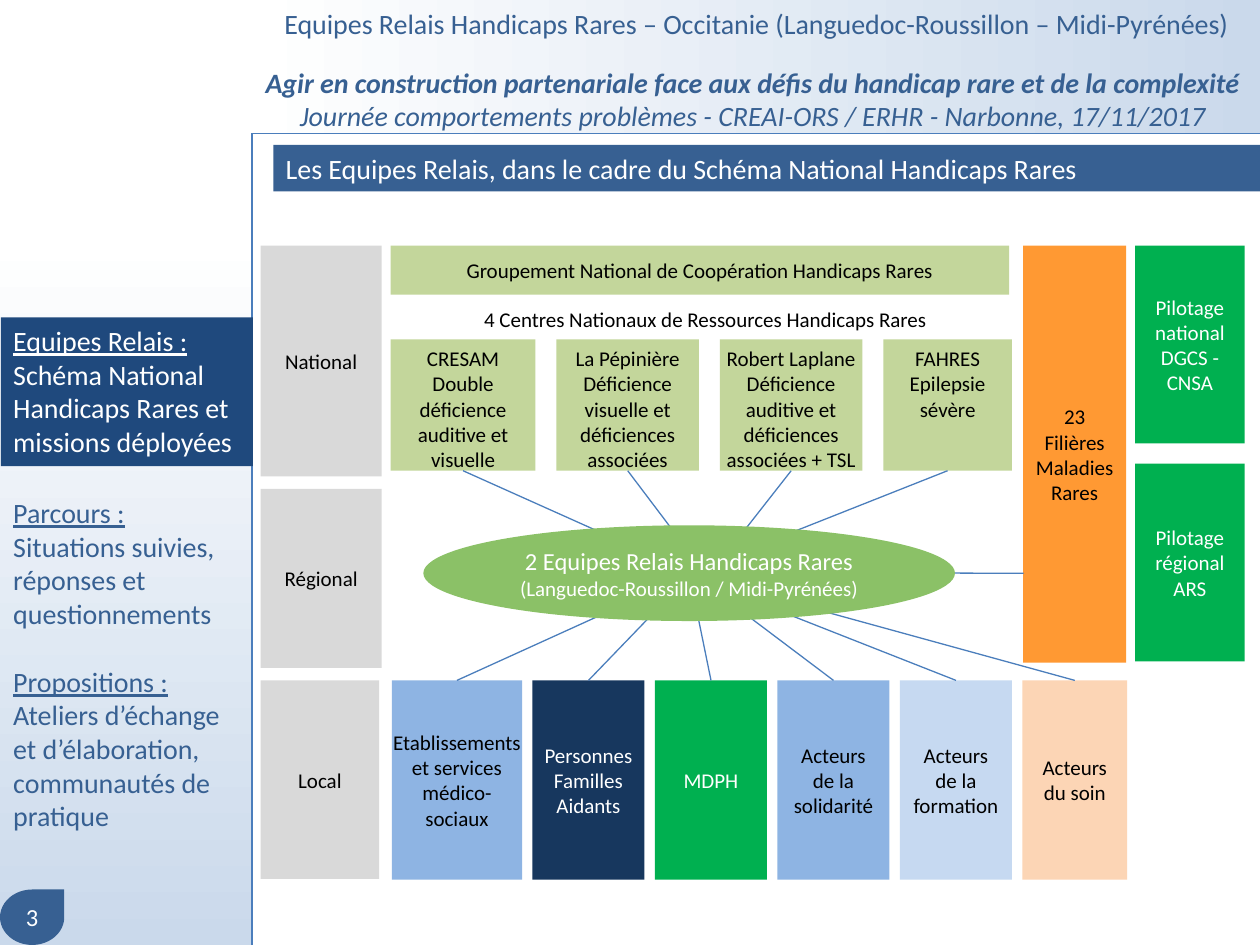
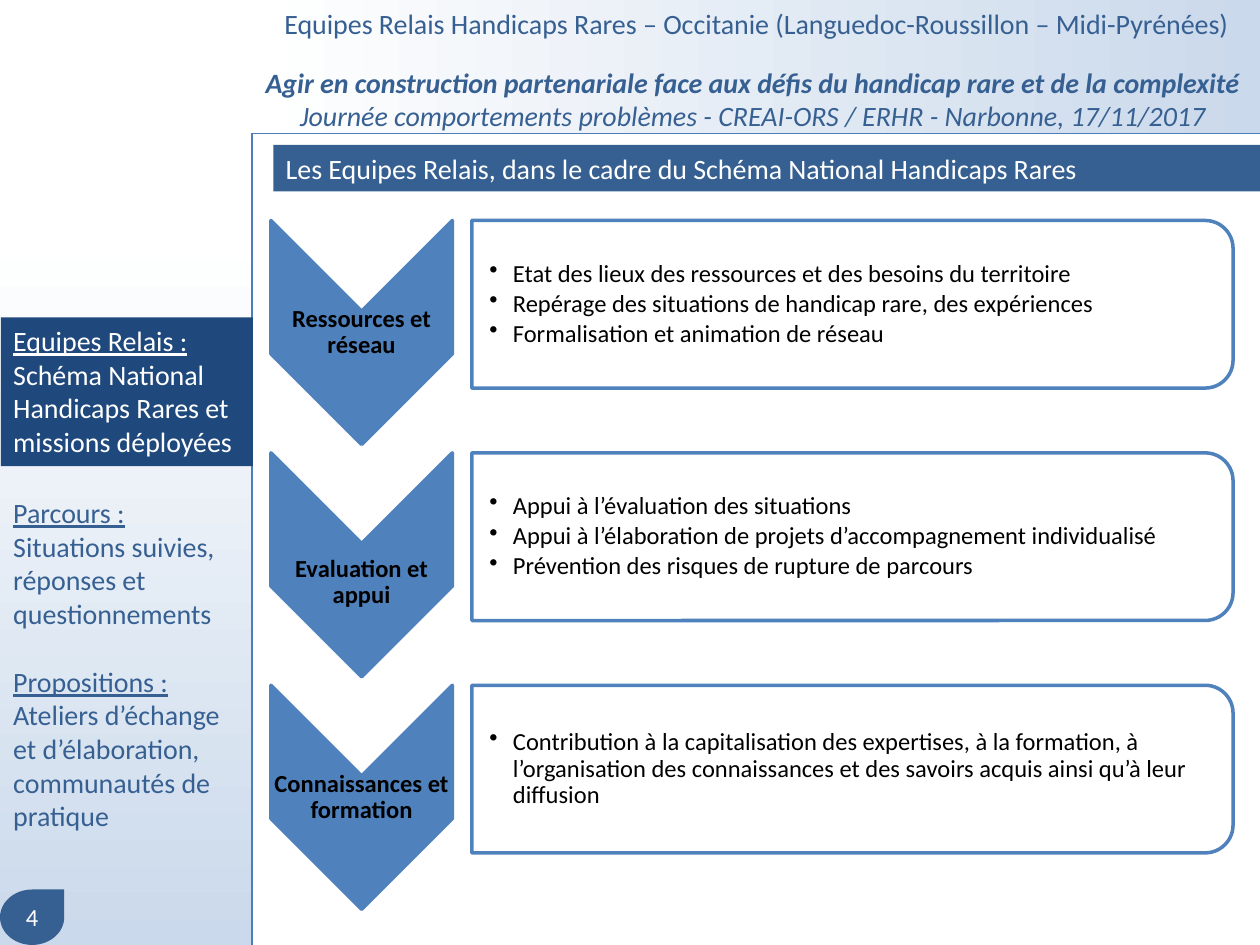
from dataclasses import dataclass

import pptx
import pptx.dml.color
import pptx.enum.shapes
import pptx.enum.text
import pptx.oxml
import pptx.oxml.ns
import pptx.util

Pt = pptx.util.Pt
SHAPE = pptx.enum.shapes.MSO_SHAPE
ALIGN = pptx.enum.text.PP_ALIGN
ANCHOR = pptx.enum.text.MSO_ANCHOR

FONT = "Calibri"
COLORS = {
    "white": "FFFFFF", "black": "000000", "pale": "CAD9EB", "blue": "376092",
    "active": "1F497D", "line": "4B7EBC", "grey": "D9D9D9", "olive": "C3D69B",
    "orange": "FF9933", "green": "00B050", "sky": "8EB4E3", "navy": "17375E",
    "ice": "C6D9F1", "peach": "FCD5B5", "relay": "8BC167", "step": "4F81BD",
}


@dataclass
class Text:
    text: str
    color: str = "black"
    size: float = 12
    align: ALIGN = ALIGN.CENTER
    anchor: ANCHOR = ANCHOR.MIDDLE
    inset_x: float = 7.2
    inset_y: float = 3.6


@dataclass
class Box:
    x: float
    y: float
    w: float
    h: float
    fill: str
    text: Text | None = None
    shape: SHAPE = SHAPE.RECTANGLE


@dataclass
class Cell:
    w: float
    fill: str
    text: Text
    hub: tuple[float, float]


@dataclass
class Step:
    label: str
    bullets: str
    label_shift: float = 0


def rgb(name: str) -> pptx.dml.color.RGBColor:
    return pptx.dml.color.RGBColor.from_string(COLORS[name])


def write(sp, t: Text):
    tf = sp.text_frame
    tf.word_wrap = True
    tf.vertical_anchor = t.anchor
    tf.margin_left = tf.margin_right = Pt(t.inset_x)
    tf.margin_top = tf.margin_bottom = Pt(t.inset_y)
    tf.text = t.text
    for p in tf.paragraphs:
        p.alignment = t.align
        for r in p.runs:
            r.font.name = FONT
            r.font.size = Pt(t.size)
            r.font.color.rgb = rgb(t.color)
    return tf


def add_text(s, x: float, y: float, w: float, h: float, t: Text):
    return write(s.shapes.add_textbox(Pt(x), Pt(y), Pt(w), Pt(h)), t)


def add_box(s, b: Box):
    sp = s.shapes.add_shape(b.shape, Pt(b.x), Pt(b.y), Pt(b.w), Pt(b.h))
    sp.shadow.inherit = False
    sp.fill.solid()
    sp.fill.fore_color.rgb = rgb(b.fill)
    sp.line.fill.background()
    if b.text:
        write(sp, b.text)
    return sp


def add_fade(s, b: Box, angle: float) -> None:
    fill = add_box(s, b).fill
    fill.gradient()
    fill.gradient_angle = angle
    for stop, position, color in zip(fill.gradient_stops, (0, 1), ("white", b.fill)):
        stop.position = position
        stop.color.rgb = rgb(color)


def add_turned(s, b: Box) -> None:
    x, y = b.x + (b.w - b.h) / 2, b.y + (b.h - b.w) / 2
    sp = add_box(s, Box(x, y, b.h, b.w, b.fill, shape=b.shape))
    sp.rotation = 90
    sp.line.color.rgb = rgb("step")
    sp.line.width = Pt(2)


def add_line(s, x1: float, y1: float, x2: float, y2: float):
    c = s.shapes.add_connector(pptx.enum.shapes.MSO_CONNECTOR.STRAIGHT,
                               Pt(x1), Pt(y1), Pt(x2), Pt(y2))
    c.line.color.rgb = rgb("line")
    c.line.width = Pt(0.75)
    pptx.oxml.ns.qn("a:effectLst")
    c._element.spPr.append(pptx.oxml.parse_xml(
        f"<a:effectLst {pptx.oxml.ns.nsdecls('a')}/>"))
    return c


def underline(paragraphs) -> None:
    for p in paragraphs:
        p.runs[0].font.underline = True


def add_frame(prs, number: int):
    s = prs.slides.add_slide(prs.slide_layouts[6])
    add_fade(s, Box(142.6, 0, 577.4, 76.3, "pale"), 0)
    add_fade(s, Box(0, 134, 144.7, 406, "pale"), 270)
    add_box(s, Box(0, 508.3, 36.7, 31.7, "blue",
                   Text(str(number), "white", 14, inset_x=2.9, inset_y=2.9),
                   SHAPE.TEAR))
    add_text(s, 144.7, 0, 575.3, 26.6, Text(
        "Equipes Relais Handicaps Rares – Occitanie (Languedoc-Roussillon – Midi-Pyrénées)",
        "blue", 16, anchor=ANCHOR.TOP))
    tf = add_text(s, 0.5, 279.8, 144, 200, Text(
        "Parcours :\nSituations suivies, réponses et questionnements\n"
        "Propositions :\nAteliers d’échange et d’élaboration, communautés de pratique",
        "blue", 16, ALIGN.LEFT, ANCHOR.TOP))
    underline(tf.paragraphs[::2])
    tf.paragraphs[2].space_before = Pt(19.5)
    add_line(s, 720, 76.3, 144, 76.3)
    add_line(s, 144, 76.3, 144, 540)
    tf = add_text(s, 142.6, 33.8, 575.3, 46, Text(
        "Agir en construction partenariale face aux défis du handicap rare et de la complexité\n"
        "Journée comportements problèmes - CREAI-ORS / ERHR - Narbonne, 17/11/2017",
        "blue", 16, anchor=ANCHOR.TOP))
    for p in tf.paragraphs:
        p.runs[0].font.italic = True
    tf.paragraphs[0].runs[0].font.bold = True
    add_box(s, Box(156.2, 82.8, 563.8, 26.6, "blue", Text(
        "Les Equipes Relais, dans le cadre du Schéma National Handicaps Rares",
        "white", 16, ALIGN.LEFT, ANCHOR.TOP)))
    sp = add_box(s, Box(0.5, 181.4, 144, 85, "active", Text(
        "Equipes Relais :\nSchéma National Handicaps Rares et missions déployées",
        "white", 16, ALIGN.LEFT, ANCHOR.TOP)))
    underline(sp.text_frame.paragraphs[:1])
    return s


def add_linked_row(s, x: float, y: float, h: float, gap: float, site: int,
                   cells: list[Cell]) -> None:
    for cell in cells:
        sp = add_box(s, Box(x, y, cell.w, h, cell.fill, cell.text))
        c = add_line(s, *cell.hub, x + cell.w / 2, y)
        c.end_connect(sp, site)
        x += cell.w + gap


LEVELS = [
    Box(149, 140.4, 69.1, 131.8, "grey", Text("National")),
    Box(149, 279.4, 69.1, 102.2, "grey", Text("Régional")),
    Box(149, 388.8, 67.7, 113.4, "grey", Text("Local")),
    Box(223.2, 140.4, 353.5, 28, "olive",
        Text("Groupement National de Coopération Handicaps Rares")),
    Box(584.6, 140.4, 59, 238.3, "orange", Text("23\nFilières Maladies Rares")),
    Box(648.7, 140.4, 62.6, 113, "green",
        Text("Pilotage national DGCS - CNSA", "white")),
    Box(648.7, 265, 62.6, 113, "green", Text("Pilotage régional\nARS", "white")),
]


def center(text: str, inset_x: float = 7.2) -> Text:
    return Text(text, anchor=ANCHOR.TOP, inset_x=inset_x)


CENTERS = [
    Cell(82.8, "olive", center("CRESAM\nDouble déficience auditive et visuelle"), (393.8, 326.9)),
    Cell(81.4, "olive", center("La Pépinière\nDéficience visuelle et déficiences associées"),
         (400.3, 324)),
    Cell(81.4, "olive",
         center("Robert Laplane\nDéficience auditive et déficiences associées + TSL", 0),
         (409, 324)),
    Cell(73.4, "olive", center("FAHRES\nEpilepsie sévère"), (402.5, 324)),
]

LOCAL_ACTORS = [
    Cell(74.4, "sky", Text("Etablissements et services médico-sociaux", inset_x=0),
         (389.5, 330.5)),
    Cell(64, "navy", Text("Personnes Familles\nAidants", "white", inset_x=0), (395.3, 327.6)),
    Cell(64, "green", Text("MDPH", "white"), (393.8, 327.6)),
    Cell(64, "sky", Text("Acteurs de la solidarité"), (398.9, 330.5)),
    Cell(64, "ice", Text("Acteurs de la formation"), (398.2, 330.5)),
    Cell(59.8, "peach", Text("Acteurs du soin"), (396.7, 329)),
]

STEPS = [
    Step("Ressources et réseau",
         "Etat des lieux des ressources et des besoins du territoire\n"
         "Repérage des situations de handicap rare, des expériences\n"
         "Formalisation et animation de réseau"),
    Step("Evaluation et appui",
         "Appui à l’évaluation des situations\n"
         "Appui à l’élaboration de projets d’accompagnement individualisé\n"
         "Prévention des risques de rupture de parcours", 10),
    Step("Connaissances et formation",
         "Contribution à la capitalisation des expertises, à la formation, à l’organisation "
         "des connaissances et des savoirs acquis ainsi qu’à leur diffusion"),
]


def build_network(prs) -> None:
    s = add_frame(prs, 3)
    for b in LEVELS:
        add_box(s, b)
    add_text(s, 229.7, 168.5, 347, 28,
             Text("4 Centres Nationaux de Ressources Handicaps Rares"))
    add_linked_row(s, 223.2, 194, 75, 12, 2, CENTERS)
    add_linked_row(s, 223.9, 388.8, 113.8, 6, 0, LOCAL_ACTORS)
    add_line(s, 353.5, 326.9, 585, 327.6)
    sp = add_box(s, Box(241.9, 300.2, 303.8, 54.7, "relay", Text(
        "2 Equipes Relais Handicaps Rares\n(Languedoc-Roussillon / Midi-Pyrénées)",
        "white"), SHAPE.OVAL))
    sp.text_frame.paragraphs[0].runs[0].font.size = Pt(14)


def add_bullet(p) -> None:
    pPr = p._p.get_or_add_pPr()
    pPr.set("marL", str(Pt(13.5)))
    pPr.set("indent", str(-Pt(13.5)))
    pPr.append(pptx.oxml.parse_xml(
        f"<a:buChar {pptx.oxml.ns.nsdecls('a')} char='•'/>"))
    p.space_after = Pt(2)


def build_missions(prs) -> None:
    s = add_frame(prs, 4)
    for i, step in enumerate(STEPS):
        y = 126 + 132.8 * i
        add_turned(s, Box(154.8, y, 103.7, 128, "step", shape=SHAPE.CHEVRON))
        label = add_text(s, 154.8, y + 45 + step.label_shift, 103.7, 38,
                         Text(step.label, size=14, inset_x=0.7, inset_y=0.7))
        add_turned(s, Box(269.6, y, 435, 95.8, "white", shape=SHAPE.ROUND_2_SAME_RECTANGLE))
        bullets = add_text(s, 269.6, y + 4.7, 431, 86.4,
                           Text(step.bullets, size=14, align=ALIGN.LEFT,
                                inset_x=0.7, inset_y=0.7))
        bullets.margin_left = Pt(10)
        for p in label.paragraphs + bullets.paragraphs:
            p.line_spacing = 0.9
        label.paragraphs[0].runs[0].font.bold = True
        for p in bullets.paragraphs:
            add_bullet(p)


def main() -> None:
    prs = pptx.Presentation()
    prs.slide_width, prs.slide_height = Pt(720), Pt(540)
    build_network(prs)
    build_missions(prs)
    prs.save("out.pptx")


if __name__ == "__main__":
    main()
